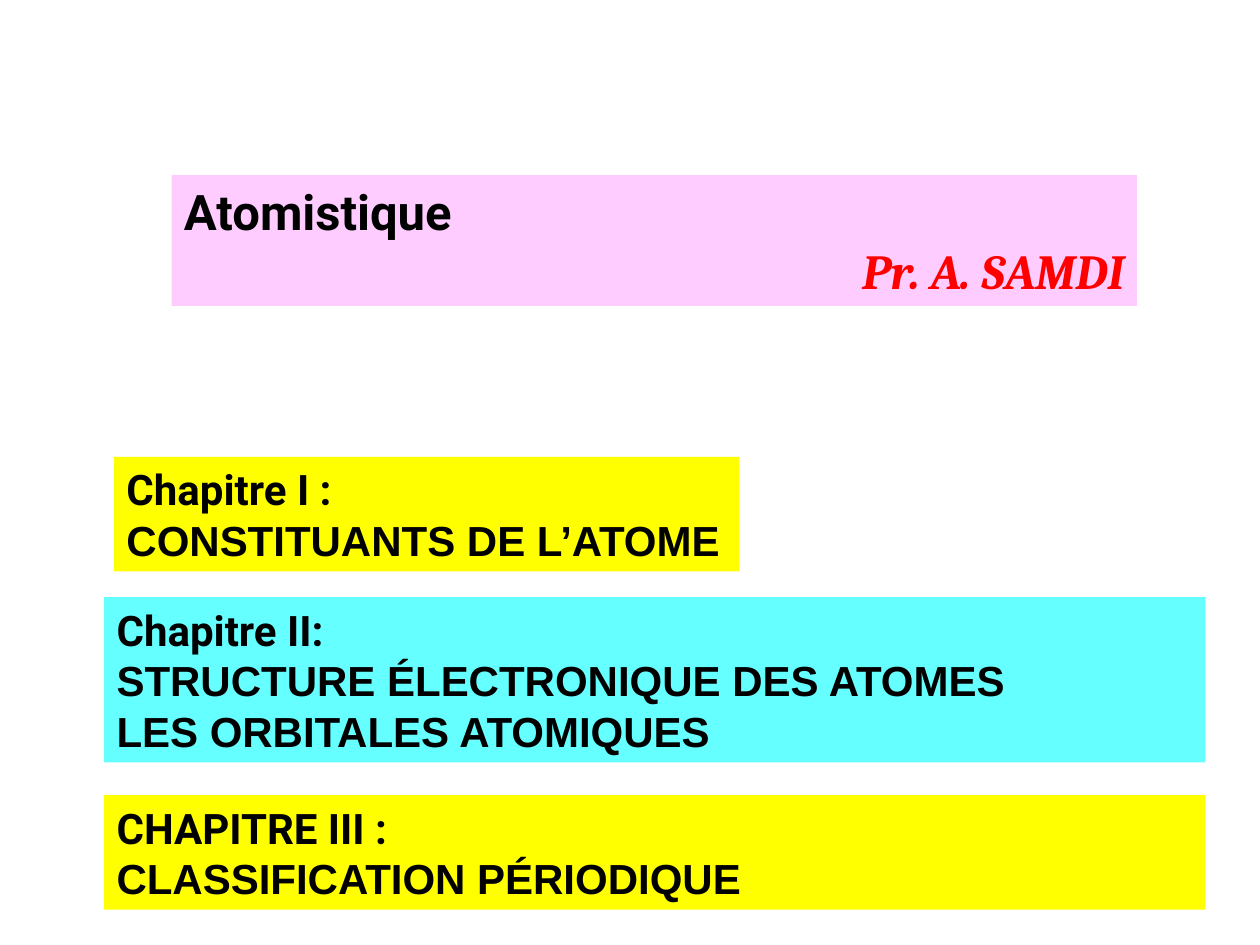
import pptx
import pptx.dml.color
import pptx.enum.shapes
import pptx.enum.text
import pptx.util

Cm, Pt = pptx.util.Cm, pptx.util.Pt
RGBColor = pptx.dml.color.RGBColor
ALIGN = pptx.enum.text.PP_ALIGN

BLACK = RGBColor(0x00, 0x00, 0x00)
RED = RGBColor(0xFF, 0x00, 0x00)
YELLOW = RGBColor(0xFF, 0xFF, 0x00)
CYAN = RGBColor(0x66, 0xFF, 0xFF)
PINK = RGBColor(0xFF, 0xCC, 0xFF)

HEADING = {"name": "Roboto", "bold": True, "color": BLACK}
TOPIC = {"name": "Arial", "bold": True, "color": BLACK}
AUTHOR = {"name": "Cambria", "bold": True, "italic": True, "color": RED}

# Each box is left, top, width, height in cm; each line is text, format, alignment.
PANELS = [
    {"box": (2.3, 9.21, 12.6, 2.31), "fill": YELLOW, "size": 24, "wrap": False,
     "lines": [("Chapitre I : ", HEADING, ALIGN.JUSTIFY),
               ("CONSTITUANTS DE L’ATOME", TOPIC, ALIGN.JUSTIFY)]},
    {"box": (2.1, 12.04, 22.2, 3.33), "fill": CYAN, "size": 24, "wrap": True,
     "lines": [("Chapitre II: ", HEADING, ALIGN.JUSTIFY),
               ("STRUCTURE ÉLECTRONIQUE DES ATOMES", TOPIC, ALIGN.JUSTIFY),
               ("LES ORBITALES ATOMIQUES", TOPIC, ALIGN.JUSTIFY)]},
    {"box": (2.1, 16.03, 22.2, 2.31), "fill": YELLOW, "size": 24, "wrap": True,
     "lines": [("CHAPITRE III : ", HEADING, ALIGN.JUSTIFY),
               ("CLASSIFICATION PÉRIODIQUE", TOPIC, ALIGN.JUSTIFY)]},
    {"box": (3.46, 3.53, 19.46, 2.64), "fill": PINK, "size": 28, "wrap": True,
     "lines": [("Atomistique", HEADING, ALIGN.JUSTIFY),
               ("Pr. A. SAMDI", AUTHOR, ALIGN.RIGHT)]},
]


def format_run(r, style, size):
    r.font.size = Pt(size)
    for key, value in style.items():
        if key == "color":
            r.font.color.rgb = value
        else:
            setattr(r.font, key, value)


def add_panel(slide, panel):
    sp = slide.shapes.add_shape(pptx.enum.shapes.MSO_SHAPE.RECTANGLE,
                                *map(Cm, panel["box"]))
    sp.shadow.inherit = False
    sp.fill.solid()
    sp.fill.fore_color.rgb = panel["fill"]
    sp.line.fill.background()
    tf = sp.text_frame
    tf.word_wrap = panel["wrap"]
    tf.auto_size = pptx.enum.text.MSO_AUTO_SIZE.SHAPE_TO_FIT_TEXT
    tf.vertical_anchor = pptx.enum.text.MSO_ANCHOR.MIDDLE
    for i, (text, style, align) in enumerate(panel["lines"]):
        p = tf.add_paragraph() if i else tf.paragraphs[0]
        p.alignment = align
        r = p.add_run()
        r.text = text
        format_run(r, style, panel["size"])


def main():
    prs = pptx.Presentation()
    prs.slide_width, prs.slide_height = Cm(25.4), Cm(19.05)
    slide = prs.slides.add_slide(prs.slide_layouts[6])
    for panel in PANELS:
        add_panel(slide, panel)
    prs.save("out.pptx")


if __name__ == "__main__":
    main()
